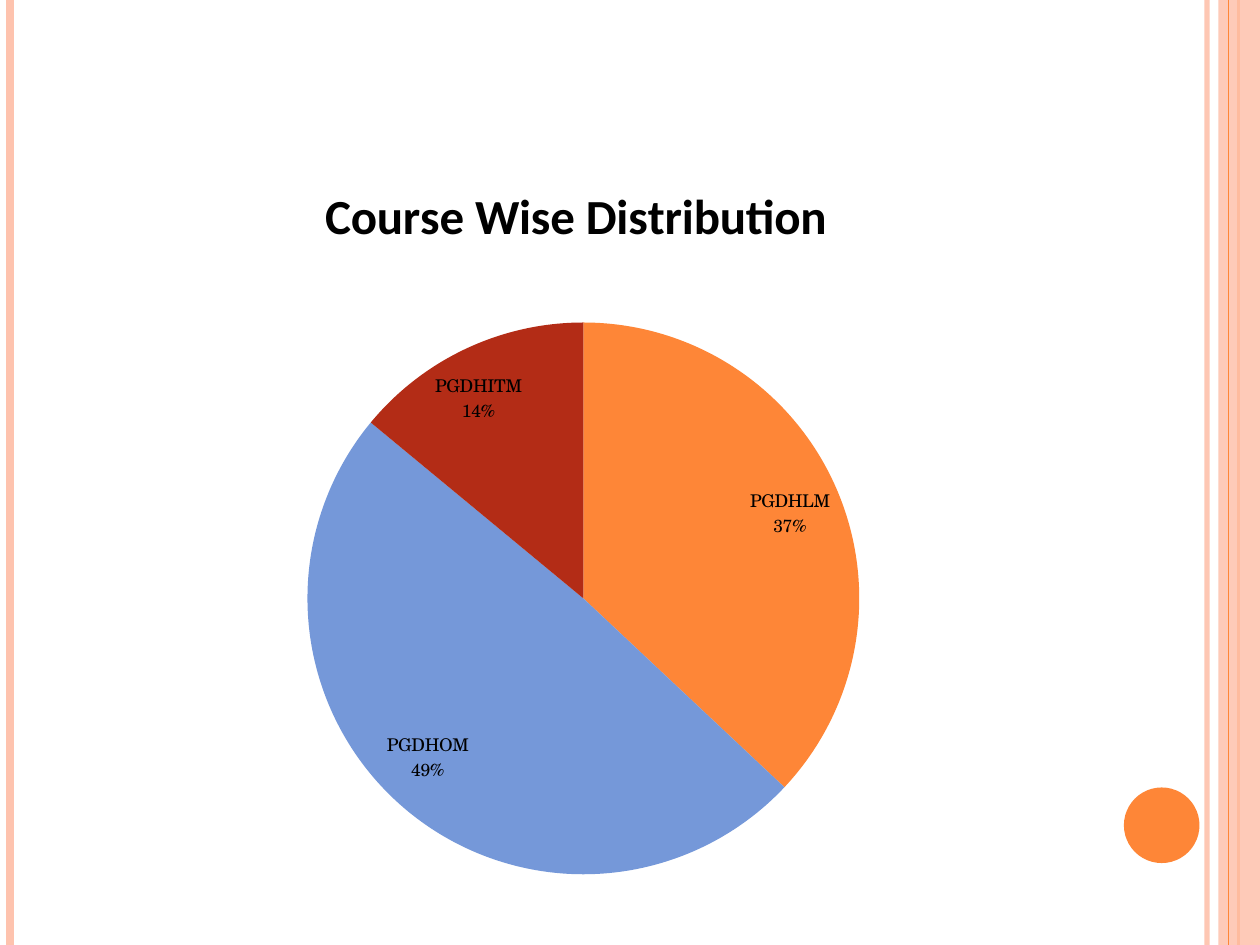
from lxml import etree
from pptx import Presentation
from pptx.chart.data import CategoryChartData
from pptx.dml.color import RGBColor
from pptx.enum.chart import XL_CHART_TYPE, XL_LABEL_POSITION
from pptx.enum.shapes import MSO_CONNECTOR, MSO_SHAPE
from pptx.oxml import parse_xml
from pptx.oxml.ns import nsdecls, qn
from pptx.util import Inches, Pt

WIDTH, HEIGHT = 10, 7.5
ORANGE, PEACH, BLACK = "FE8637", "FEC3AE", "000000"

TITLE = "Course Wise Distribution"
COURSES = [  # name, percent, colour, label shift in inches
    ("PGDHLM", 37, ORANGE, (0, -0.03)),
    ("PGDHOM", 49, "7598D9", (-0.15, -0.14)),
    ("PGDHITM", 14, "B32C16", (-0.27, 0.14)),
]
CHART_BOX = (0.5, 1.33, 8.17, 5.75)
PIE_BOX = (2.44, 2.56, 4.38, 4.38)
TITLE_CORNER = (2.51, 1.38)

STRIPES_BEHIND = [  # x, line width, colour, opacity percent
    (9.58, 3, PEACH, 93),
    (0.08, 4.5, PEACH, 100),
    (9.83, 1.5, ORANGE, 100),
]
BAND = (9.67, 0, 0.33, HEIGHT)
STRIPE_IN_FRONT = (9.75, 0.75, ORANGE, 100)
DISC = (8.92, 6.25, 0.6, 0.6)


def color(value):
    return RGBColor.from_string(value)


def set_opacity(properties, percent):
    for node in properties.iter(qn("a:srgbClr")):
        etree.SubElement(node, qn("a:alpha"), val=str(percent * 1000))


def add_stripe(page, x, width, line_color, opacity):
    stripe = page.shapes.add_connector(
        MSO_CONNECTOR.STRAIGHT, Inches(x), 0, Inches(x), Inches(HEIGHT))
    stripe.line.width = Pt(width)
    stripe.line.color.rgb = color(line_color)
    properties = stripe.element.spPr
    if opacity < 100:
        set_opacity(properties, opacity)
    etree.SubElement(properties, qn("a:effectLst"))


def add_plain_shape(page, kind, place, fill, opacity=100):
    shape = page.shapes.add_shape(kind, *map(Inches, place))
    shape.shadow.inherit = False
    shape.fill.solid()
    shape.fill.fore_color.rgb = color(fill)
    shape.line.fill.background()
    if opacity < 100:
        set_opacity(shape.element.spPr, opacity)


def format_font(font, name, size, bold=False):
    font.name, font.size, font.bold = name, Pt(size), bold
    font.color.rgb = color(BLACK)


def set_layout(parent, index, x, y, size=(), modes=""):
    """Give a chart part a manual layout; lengths are inches within the chart."""
    for old in parent.findall(qn("c:layout")):
        parent.remove(old)
    width, height = CHART_BOX[2:]
    numbers = zip("xywh", (x, y, *size), (width, height) * 2)
    sizes = "".join(f'<c:{key} val="{length / whole:.4f}"/>'
                    for key, length, whole in numbers)
    parent.insert(index, parse_xml(
        f'<c:layout {nsdecls("c")}><c:manualLayout>{modes}{sizes}'
        f'</c:manualLayout></c:layout>'))


def set_edge_layout(parent, index, place):
    """Place a chart part by its position on the slide."""
    left, top = CHART_BOX[:2]
    x, y, *size = place
    target = '<c:layoutTarget val="inner"/>' if size else ""
    set_layout(parent, index, x - left, y - top, size,
               target + '<c:xMode val="edge"/><c:yMode val="edge"/>')


def format_labels(labels):
    """Show name over percent, inside the edge of the slice."""
    labels.show_value = False
    labels.show_category_name = labels.show_percentage = True
    labels.position = XL_LABEL_POSITION.INSIDE_END
    format_font(labels.font, "TeX Gyre Schola", 10)
    group = labels._element
    separator = f'<c:separator {nsdecls("c")}>\n</c:separator>'
    group.find(qn("c:showBubbleSize")).addnext(parse_xml(separator))
    settings = list(group)
    for index, (*_, shift) in enumerate(COURSES):
        label = etree.Element(qn("c:dLbl"))
        etree.SubElement(label, qn("c:idx"), val=str(index))
        for node in settings:
            if node.tag != qn("c:showLeaderLines"):
                label.append(parse_xml(etree.tostring(node)))
        set_layout(label, 1, *shift)
        group.insert(index, label)


def add_course_chart(page):
    names, percents, fills, _ = zip(*COURSES)
    data = CategoryChartData()
    data.categories = names
    data.add_series("Series 1", percents)
    chart = page.shapes.add_chart(
        XL_CHART_TYPE.PIE, *map(Inches, CHART_BOX), data).chart
    format_font(chart.font, "TeX Gyre Schola", 10)
    chart.has_legend = False
    chart.has_title = True
    title = chart.chart_title.text_frame
    title.text = TITLE
    format_font(title.paragraphs[0].runs[0].font, "Calibri", 28, bold=True)
    set_edge_layout(chart.element.chart.find(qn("c:title")), 1, TITLE_CORNER)

    plot = chart.plots[0]
    plot.vary_by_categories = True
    for index, fill in enumerate(fills):
        point = plot.series[0].points[index].format
        point.fill.solid()
        point.fill.fore_color.rgb = color(fill)
        point.line.fill.background()
    format_labels(plot.series[0].data_labels)
    set_edge_layout(chart.element.chart.plotArea, 0, PIE_BOX)


def main():
    deck = Presentation()
    deck.slide_width, deck.slide_height = Inches(WIDTH), Inches(HEIGHT)
    page = deck.slides.add_slide(deck.slide_layouts[6])
    for stripe in STRIPES_BEHIND:
        add_stripe(page, *stripe)
    add_plain_shape(page, MSO_SHAPE.RECTANGLE, BAND, PEACH, opacity=87)
    add_stripe(page, *STRIPE_IN_FRONT)
    add_plain_shape(page, MSO_SHAPE.OVAL, DISC, ORANGE)
    add_course_chart(page)
    deck.save("out.pptx")


if __name__ == "__main__":
    main()
